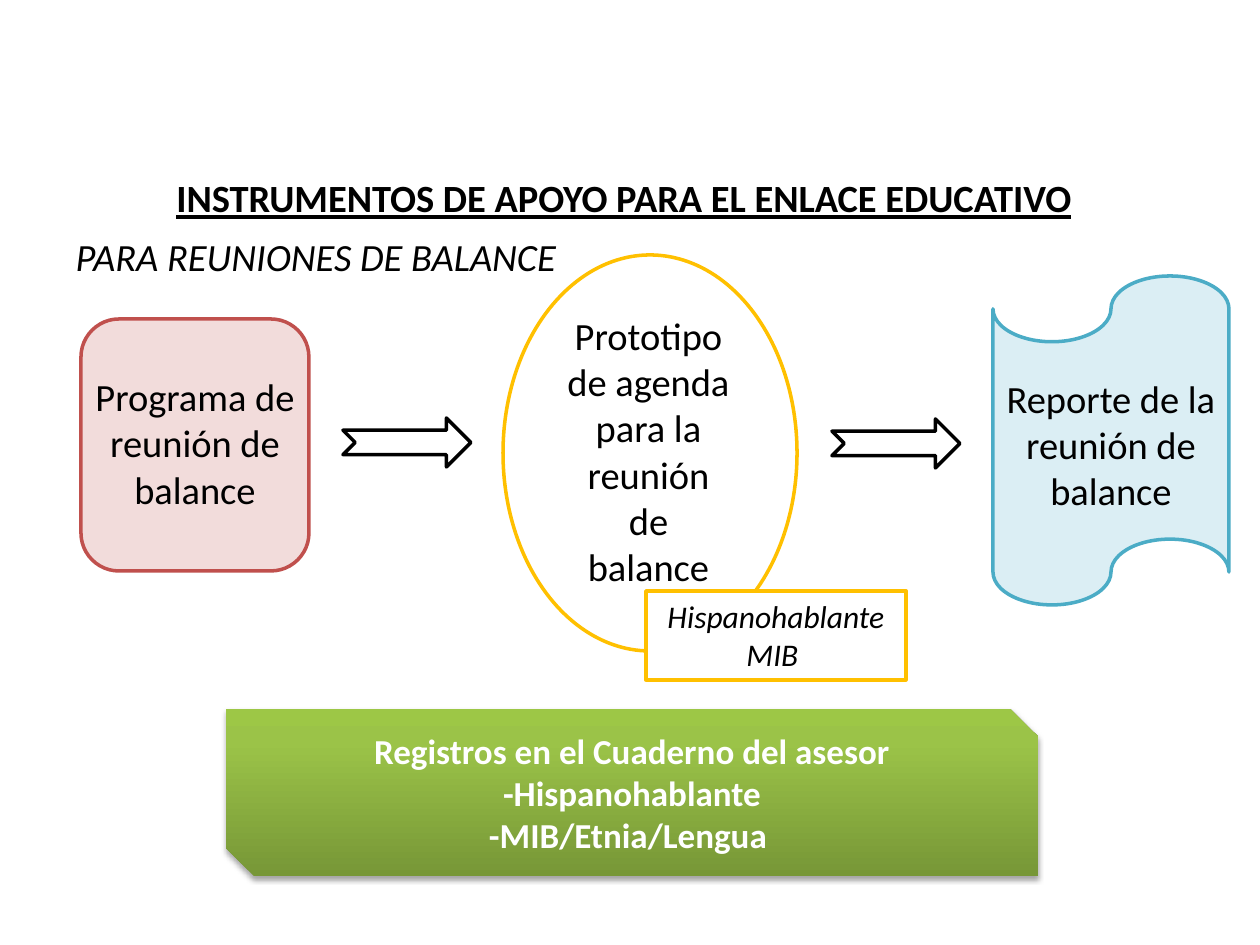
from copy import deepcopy
from dataclasses import dataclass

from lxml.etree import SubElement
from pptx import Presentation
from pptx.dml.color import RGBColor
from pptx.enum.shapes import MSO_SHAPE as Shape
from pptx.enum.text import MSO_ANCHOR as Anchor, PP_ALIGN as Align
from pptx.oxml.ns import qn
from pptx.util import Emu, Pt

PX = 914400 // 126


@dataclass(frozen=True)
class Theme:
    font: str = "Calibri"
    ink: str = "000000"
    paper: str = "FFFFFF"
    red: str = "C0504D"
    pink: str = "F2DCDB"
    gold: str = "FFC000"
    teal: str = "4BACC6"
    ice: str = "DBEEF4"
    greens: tuple = ((0, "779737"), (0.8, "9BC348"), (1, "9DC746"))
    body: int = 22
    banner: int = 20
    label: int = 18
    outline: int = 2


THEME = Theme()

TITLE = ("INSTRUMENTOS DE APOYO PARA EL ENLACE EDUCATIVO", (43, 168, 1162, 59))
SUBTITLE = ("PARA REUNIONES DE BALANCE", (-1, 227, 634, 59))
# preset, frame, fill, line, text, text frame
STEPS = [
    (Shape.ROUNDED_RECTANGLE, (81, 319, 228, 252), THEME.pink, THEME.red,
     "Programa de reunión de balance", (66, 367, 258, 152)),
    (Shape.OVAL, (503, 255, 294, 396), None, THEME.gold,
     "Prototipo de agenda para la reunión de balance", (552, 306, 193, 292)),
    (Shape.FLOWCHART_PUNCHED_TAPE, (993, 276, 236, 329), THEME.ice, THEME.teal,
     "Reporte de la reunión de balance", (993, 369, 236, 152)),
]
LANGUAGES = (["Hispanohablante", "MIB "], (646, 591, 260, 89))
RECORDS = (["Registros en el Cuaderno del asesor", "-Hispanohablante",
            "-MIB/Etnia/Lengua "], (226, 709, 812, 167))
ARROWS = [(343, 418, 128, 49), (832, 419, 128, 49)]


def rgb(code):
    return RGBColor.from_string(code)


def emu(frame):
    return [Emu(value * PX) for value in frame]


def write(box, lines, size=THEME.body, color=THEME.ink, anchor=Anchor.TOP, **style):
    """Fill a box with centred lines; style holds bold, italic or underline."""
    frame = box.text_frame
    frame.word_wrap = True
    frame.vertical_anchor = anchor
    for index, line in enumerate([lines] if isinstance(lines, str) else lines):
        para = frame.paragraphs[0] if index == 0 else frame.add_paragraph()
        para.alignment = Align.CENTER
        span = para.add_run()
        span.text = line
        span.font.name = THEME.font
        span.font.size = Pt(size)
        span.font.color.rgb = rgb(color)
        for name, value in style.items():
            setattr(span.font, name, value)


def add_text(page, lines, frame, **style):
    write(page.shapes.add_textbox(*emu(frame)), lines, **style)


def add_figure(page, preset, frame, fill=None, line=None):
    figure = page.shapes.add_shape(preset, *emu(frame))
    figure.shadow.inherit = False
    if fill:
        figure.fill.solid()
        figure.fill.fore_color.rgb = rgb(fill)
    else:
        figure.fill.background()
    if line:
        figure.line.color.rgb = rgb(line)
        figure.line.width = Pt(THEME.outline)
    else:
        figure.line.fill.background()
    return figure


def shade(figure, stops):
    """Apply an upward gradient with any number of stops."""
    fill = figure.fill
    fill.gradient()
    fill.gradient_angle = 90
    stop_list = figure.element.spPr.find(".//" + qn("a:gsLst"))
    while len(stop_list) < len(stops):
        stop_list.append(deepcopy(stop_list[-1]))
    for stop, (position, color) in zip(fill.gradient_stops, stops):
        stop.position = position
        stop.color.rgb = rgb(color)


def drop_shadow(figure):
    effects = figure.element.spPr.find(qn("a:effectLst"))
    shadow = SubElement(effects, qn("a:outerShdw"), blurRad=str(Pt(3.1)),
                        dist=str(Pt(1.8)), dir="5400000", rotWithShape="0")
    color = SubElement(shadow, qn("a:srgbClr"), val=THEME.ink)
    SubElement(color, qn("a:alpha"), val="35000")


def main():
    deck = Presentation()
    deck.slide_width, deck.slide_height = emu((1260, 945))
    page = deck.slides.add_slide(deck.slide_layouts[5])

    title = page.shapes.title
    text, frame = TITLE
    title.left, title.top, title.width, title.height = emu(frame)
    write(title, text, bold=True, underline=True)

    add_text(page, *SUBTITLE, italic=True)
    for preset, frame, fill, line, text, text_frame in STEPS:
        add_figure(page, preset, frame, fill, line)
        add_text(page, text, text_frame)

    lines, frame = LANGUAGES
    label = add_figure(page, Shape.RECTANGLE, frame, THEME.paper, THEME.gold)
    write(label, lines, size=THEME.label, italic=True)

    lines, frame = RECORDS
    banner = add_figure(page, Shape.SNIP_2_DIAG_RECTANGLE, frame)
    shade(banner, THEME.greens)
    drop_shadow(banner)
    write(banner, lines, size=THEME.banner, color=THEME.paper,
          anchor=Anchor.MIDDLE, bold=True)

    for frame in ARROWS:
        add_figure(page, Shape.NOTCHED_RIGHT_ARROW, frame, THEME.paper, THEME.ink)

    deck.save("out.pptx")


if __name__ == "__main__":
    main()
